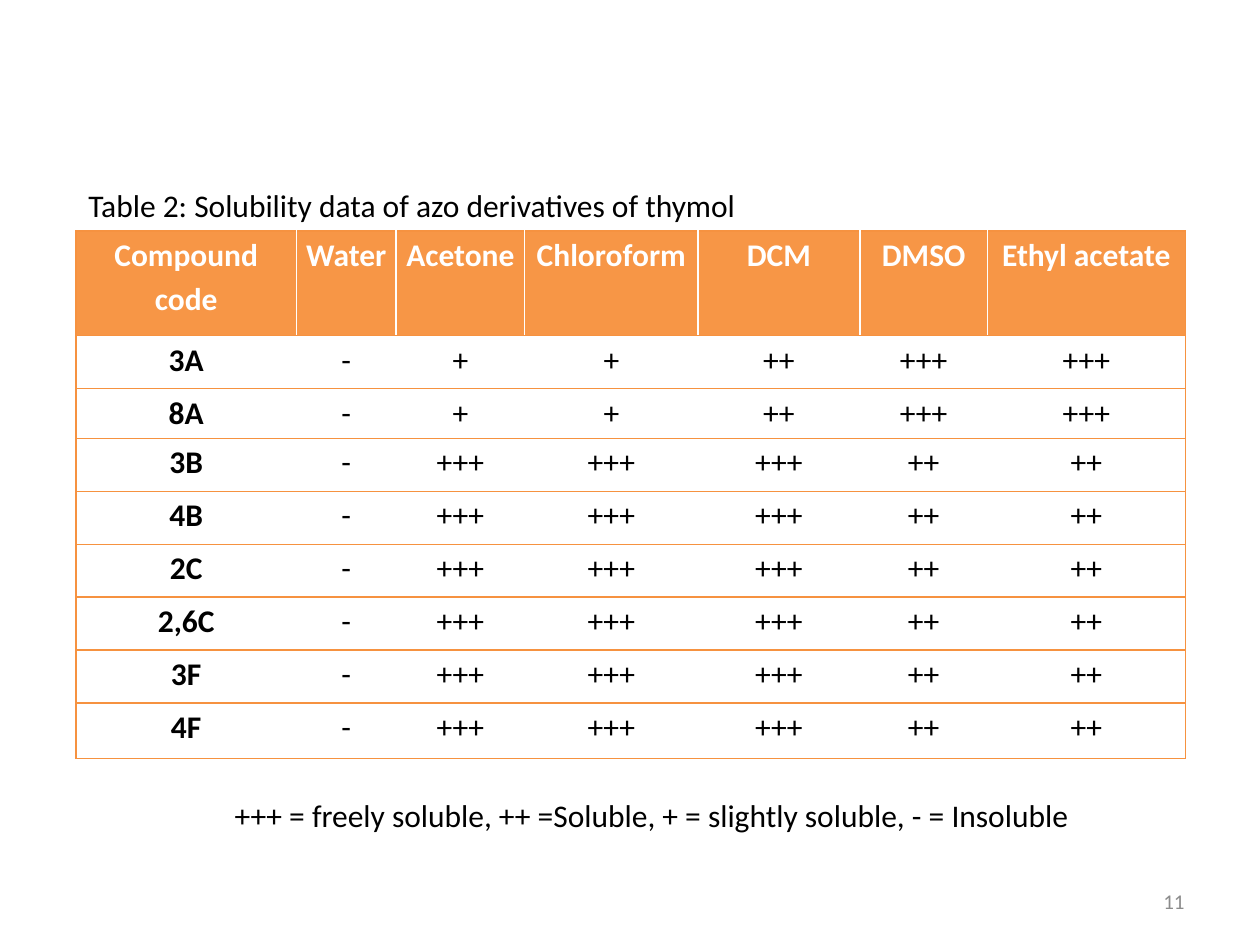
from lxml import etree
from pptx import Presentation, util as u
from pptx.dml.color import RGBColor
from pptx.enum import text
from pptx.oxml import ns

COLOURS = {"header": "F79646", "border": "F69240", "white": "FFFFFF",
           "black": "000000", "number": "8C8C8C"}
ALIGN = text.PP_ALIGN
HEADERS = ["Compound code", "Water", "Acetone", "Chloroform", "DCM", "DMSO", "Ethyl acetate"]
SLIGHT = ["-", "+", "+", "++", "+++", "+++"]
FREE = ["-", "+++", "+++", "+++", "++", "++"]
SOLUBILITY = {"3A": SLIGHT, "8A": SLIGHT, "3B": FREE, "4B": FREE,
              "2C": FREE, "2,6C": FREE, "3F": FREE, "4F": FREE}
COLUMN_WIDTHS = [126, 57, 73.5, 99, 92.5, 73, 113]
ROW_HEIGHTS = [59.8, 30.3, 28.3] + [30.3] * 5 + [31.8]


class SlideBuilder:
    """Holds the text style and the current slide, and adds elements in points."""

    def __init__(self, page, font="Calibri", size=18):
        self.page = page
        self.font = font
        self.size = size

    def format_text(self, frame, wording, colour, align, size=None, bold=False):
        frame.text = wording
        para = frame.paragraphs[0]
        para.alignment = align
        for span in para.runs:
            span.font.name = self.font
            span.font.size = u.Pt(size or self.size)
            span.font.bold = bold
            span.font.color.rgb = RGBColor.from_string(COLOURS[colour])
        return para

    def add_text(self, bounds, wording, colour="black", align=ALIGN.LEFT, size=None,
                 anchor=text.MSO_ANCHOR.TOP):
        box = self.page.shapes.add_textbox(*map(u.Pt, bounds))
        box.text_frame.word_wrap = True
        box.text_frame.vertical_anchor = anchor
        self.format_text(box.text_frame, wording, colour, align, size)

    def add_border(self, cell, sides):
        properties = cell._tc.get_or_add_tcPr()
        for index, side in enumerate(sides):
            line = etree.Element(ns.qn(f"a:ln{side}"), w=str(u.Pt(0.75)))
            fill = etree.SubElement(line, ns.qn("a:solidFill"))
            etree.SubElement(fill, ns.qn("a:srgbClr"), val=COLOURS["border"])
            properties.insert(index, line)

    def add_table(self, left, top, rows, widths, heights):
        frame = self.page.shapes.add_table(len(rows), len(widths), u.Pt(left), u.Pt(top),
                                           u.Pt(sum(widths)), u.Pt(sum(heights)))
        table = frame.table
        table.horz_banding = False
        for column, width in zip(table.columns, widths):
            column.width = u.Pt(width)
        for row, height in zip(table.rows, heights):
            row.height = u.Pt(height)
        for r, values in enumerate(rows):
            for c, value in enumerate(values):
                cell = table.cell(r, c)
                cell.margin_left = cell.margin_right = u.Pt(5)
                cell.margin_top = cell.margin_bottom = 0
                if r == 0:
                    cell.fill.solid()
                    cell.fill.fore_color.rgb = RGBColor.from_string(COLOURS["header"])
                else:
                    cell.fill.background()
                para = self.format_text(cell.text_frame, value, "black" if r else "white",
                                        ALIGN.CENTER, bold=r == 0 or c == 0)
                para.line_spacing = 1.15
                sides = ["L"] * (c == 0) + ["R"] * (c == len(widths) - 1) + ["T", "B"]
                self.add_border(cell, sides)


def main():
    deck = Presentation()
    deck.slide_width, deck.slide_height = u.Pt(720), u.Pt(540)
    builder = SlideBuilder(deck.slides.add_slide(deck.slide_layouts[6]))
    builder.add_text((516, 500.5, 168, 28.75), "11", "number", ALIGN.RIGHT, 12,
                     text.MSO_ANCHOR.MIDDLE)
    rows = [HEADERS] + [[code] + marks for code, marks in SOLUBILITY.items()]
    builder.add_table(43.4, 132, rows, COLUMN_WIDTHS, ROW_HEIGHTS)
    builder.add_text((43.4, 103, 648.6, 29),
                     "Table 2: Solubility data of azo derivatives of thymol")
    builder.add_text((78, 451.5, 589, 29),
                     "+++ = freely soluble, ++ =Soluble, + = slightly soluble, - = Insoluble",
                     align=ALIGN.CENTER)
    deck.save("out.pptx")


if __name__ == "__main__":
    main()
